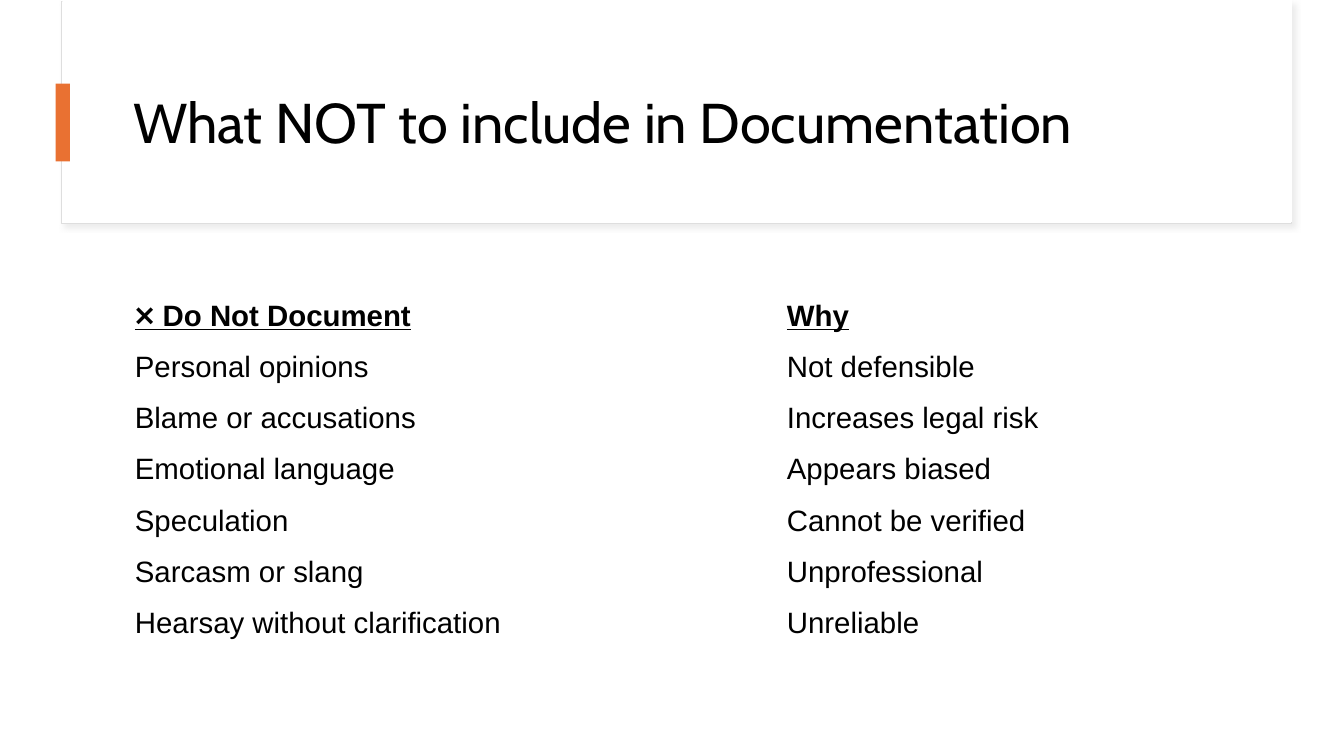
from dataclasses import dataclass
from typing import Any

from lxml.etree import SubElement
from pptx import Presentation
from pptx.dml.color import RGBColor
from pptx.enum.shapes import MSO_SHAPE as Preset
from pptx.enum.text import MSO_ANCHOR as Anchor, MSO_AUTO_SIZE as AutoSize, PP_ALIGN as Align
from pptx.oxml.ns import qn
from pptx.util import Cm, Pt


@dataclass(frozen=True)
class Theme:
    paper: str = "FFFFFF"
    ink: str = "000000"
    border: str = "DEDEDE"
    shade: str = "D9D9D9"
    accent: str = "E97132"
    title_font: str = "Cabin"
    body_font: str = "Arial"
    title_size: int = 40
    body_size: int = 21


@dataclass(frozen=True)
class Panel:
    left: float
    top: float
    width: float
    height: float
    fill: str
    border: str | None = None
    shade: str | None = None


THEME = Theme()
HEADER_PANELS = (
    Panel(1.55, 0.03, 31.01, 5.61, THEME.paper, THEME.border, THEME.shade),
    Panel(1.57, 0, 30.99, 5.59, THEME.paper),
)
ACCENT_BAR = Panel(1.4, 2.11, 0.36, 1.96, THEME.accent)
COLUMN_WIDTHS = (16.43, 11.81)
ROW_HEIGHT = 1.29
ADVICE = (
    ("❌ Do Not Document", "Why"),
    ("Personal opinions", "Not defensible"),
    ("Blame or accusations", "Increases legal risk"),
    ("Emotional language", "Appears biased"),
    ("Speculation", "Cannot be verified"),
    ("Sarcasm or slang", "Unprofessional"),
    ("Hearsay without clarification", "Unreliable"),
)
TITLE_PLACE = dict(left=Cm(3.1), top=Cm(1.52), width=Cm(28.24), height=Cm(3.28))
TITLE_FRAME = dict(word_wrap=True, auto_size=AutoSize.NONE, vertical_anchor=Anchor.MIDDLE)
TITLE_PARAGRAPH = dict(alignment=Align.LEFT, line_spacing=0.9)
TITLE_TYPE = dict(name=THEME.title_font, size=Pt(THEME.title_size))
BODY_TYPE = dict(name=THEME.body_font, size=Pt(THEME.body_size))
CELL_FORMAT = dict(
    vertical_anchor=Anchor.MIDDLE,
    margin_left=Cm(0.3),
    margin_right=Cm(0.3),
    margin_top=Cm(0.15),
    margin_bottom=Cm(0.15),
)


def apply_format(target: Any, values: dict[str, Any]) -> None:
    for name, value in values.items():
        setattr(target, name, value)


def format_font(font: Any, values: dict[str, Any]) -> None:
    apply_format(font, values)
    font.color.rgb = RGBColor.from_string(THEME.ink)


def cast_shadow(shape: Any, color: str) -> None:
    effects = shape._element.spPr.find(qn("a:effectLst"))
    shadow = SubElement(
        effects, qn("a:outerShdw"), blurRad=str(Pt(4)), dist=str(Pt(3)),
        dir="2700000", algn="tl", rotWithShape="0",
    )
    tint = SubElement(shadow, qn("a:srgbClr"), val=color)
    SubElement(tint, qn("a:alpha"), val="50000")


def draw_panel(slide: Any, panel: Panel) -> None:
    place = (Cm(n) for n in (panel.left, panel.top, panel.width, panel.height))
    shape = slide.shapes.add_shape(Preset.RECTANGLE, *place)
    shape.shadow.inherit = False
    shape.fill.solid()
    shape.fill.fore_color.rgb = RGBColor.from_string(panel.fill)
    if panel.border:
        shape.line.color.rgb = RGBColor.from_string(panel.border)
        shape.line.width = Pt(0.75)
    else:
        shape.line.fill.background()
    if panel.shade:
        cast_shadow(shape, panel.shade)


def write_title(slide: Any, wording: str) -> None:
    title = slide.shapes.title
    apply_format(title, TITLE_PLACE)
    title.text_frame.text = wording
    apply_format(title.text_frame, TITLE_FRAME)
    paragraph = title.text_frame.paragraphs[0]
    apply_format(paragraph, TITLE_PARAGRAPH)
    format_font(paragraph.runs[0].font, TITLE_TYPE)
    slide.shapes._spTree.append(title._element)


def draw_advice(slide: Any) -> None:
    advice = slide.shapes.add_table(
        len(ADVICE), len(COLUMN_WIDTHS), Cm(3.1), Cm(7.32),
        Cm(sum(COLUMN_WIDTHS)), Cm(ROW_HEIGHT * len(ADVICE)),
    ).table
    apply_format(advice, dict(first_row=True, horz_banding=False))
    for column, width in zip(advice.columns, COLUMN_WIDTHS):
        column.width = Cm(width)
    for row_index, wordings in enumerate(ADVICE):
        advice.rows[row_index].height = Cm(ROW_HEIGHT)
        heading = row_index == 0
        for column_index, wording in enumerate(wordings):
            cell = advice.cell(row_index, column_index)
            cell.text = wording
            cell.fill.solid()
            cell.fill.fore_color.rgb = RGBColor.from_string(THEME.paper)
            apply_format(cell, CELL_FORMAT)
            font = cell.text_frame.paragraphs[0].runs[0].font
            format_font(font, BODY_TYPE | dict(bold=heading, underline=heading))


def main() -> None:
    deck = Presentation()
    apply_format(deck, dict(slide_width=Cm(33.87), slide_height=Cm(19.05)))
    slide = deck.slides.add_slide(deck.slide_layouts[5])
    for panel in HEADER_PANELS:
        draw_panel(slide, panel)
    write_title(slide, "What NOT to include in Documentation")
    draw_panel(slide, ACCENT_BAR)
    draw_advice(slide)
    deck.save("out.pptx")


if __name__ == "__main__":
    main()
